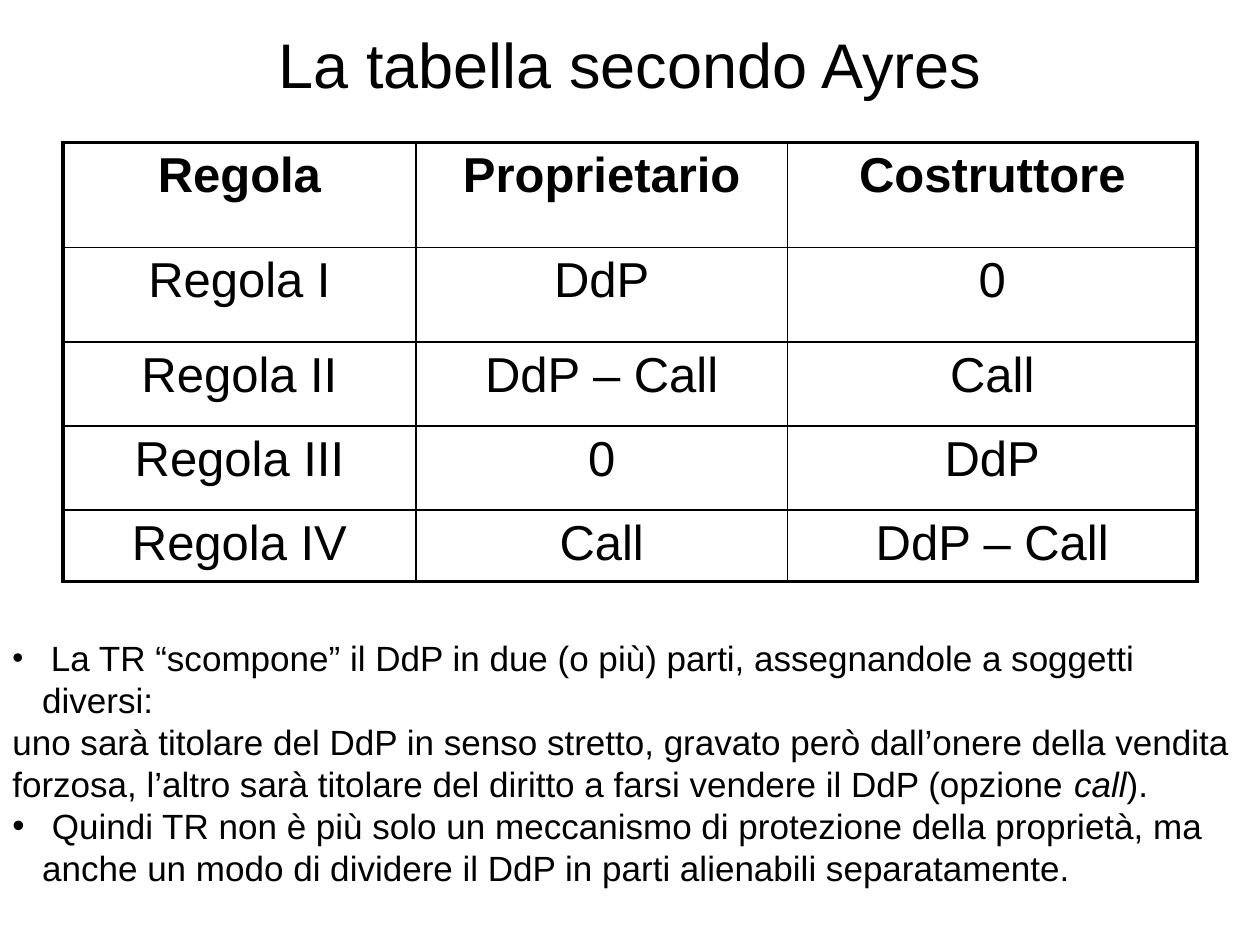
"""Build the slide on Ayres' table of property rules."""
from dataclasses import dataclass

import pptx
import pptx.dml.color
import pptx.enum.text
import pptx.oxml
import pptx.oxml.ns
import pptx.util

Pt = pptx.util.Pt
Align = pptx.enum.text.PP_ALIGN
Anchor = pptx.enum.text.MSO_ANCHOR

FONT = "Arial"
INK = "000000"
OUTER, INNER = 2.25, 1
HANGING = 17


@dataclass(frozen=True)
class Run:
    text: str
    size: float = 20
    italic: bool = False


@dataclass(frozen=True)
class Remark:
    runs: tuple[Run, ...]
    bulleted: bool = False


COLUMN_WIDTHS = (201.6, 212.4, 234)
ROW_HEIGHTS = (60, 54, 48, 48, 41)
RULES = (
    ("Regola", "Proprietario", "Costruttore"),
    ("Regola I", "DdP", "0"),
    ("Regola II", "DdP – Call", "Call"),
    ("Regola III", "0", "DdP"),
    ("Regola IV", "Call", "DdP – Call"),
)
REMARKS = (
    Remark((
        Run(" ", 18),
        Run("La TR “scompone” il DdP in due (o più) parti, assegnandole a soggetti diversi:"),
    ), bulleted=True),
    Remark((
        Run("uno sarà titolare del DdP in senso stretto, gravato però dall’onere della vendita "
            "forzosa, l’altro sarà titolare del diritto a farsi vendere il DdP (opzione "),
        Run("call", italic=True),
        Run(")."),
    )),
    Remark((
        Run(" Quindi TR non è più solo un meccanismo di protezione della proprietà, ma anche "
            "un modo di dividere il DdP in parti alienabili separatamente."),
    ), bulleted=True),
)


def color(value: str) -> pptx.dml.color.RGBColor:
    return pptx.dml.color.RGBColor.from_string(value)


def xml(markup: str):
    return pptx.oxml.parse_xml(markup.replace(" ", f" {pptx.oxml.ns.nsdecls('a')} ", 1))


def set_font(font, size: float, bold: bool = False) -> None:
    font.name, font.size, font.bold = FONT, Pt(size), bold
    font.color.rgb = color(INK)


def add_frame(slide, left: float, top: float, width: float, height: float):
    frame = slide.shapes.add_textbox(Pt(left), Pt(top), Pt(width), Pt(height)).text_frame
    frame.word_wrap = True
    return frame


def add_title(slide, text: str) -> None:
    frame = add_frame(slide, 36, -8.64, 648, 90)
    frame.vertical_anchor = Anchor.MIDDLE
    heading = frame.paragraphs[0]
    heading.text, heading.alignment = text, Align.CENTER
    set_font(heading.font, 36)


def set_borders(cell, row: int, column: int) -> None:
    on_edge = {
        "lnL": column == 0,
        "lnR": column == len(COLUMN_WIDTHS) - 1,
        "lnT": row == 0,
        "lnB": row == len(ROW_HEIGHTS) - 1,
    }
    properties = cell._tc.get_or_add_tcPr()
    for position, (side, outer) in enumerate(on_edge.items()):
        width = int(Pt(OUTER if outer else INNER))
        properties.insert(position, xml(
            f'<a:{side} w="{width}"><a:solidFill><a:srgbClr val="{INK}"/></a:solidFill></a:{side}>'
        ))


def add_rules_table(slide) -> None:
    table = slide.shapes.add_table(
        len(ROW_HEIGHTS), len(COLUMN_WIDTHS), Pt(36), Pt(81.36),
        Pt(sum(COLUMN_WIDTHS)), Pt(sum(ROW_HEIGHTS)),
    ).table
    table.first_row = table.horz_banding = False
    for column, width in zip(table.columns, COLUMN_WIDTHS):
        column.width = Pt(width)
    for row, height in zip(table.rows, ROW_HEIGHTS):
        row.height = Pt(height)
    for r, entries in enumerate(RULES):
        for c, entry in enumerate(entries):
            cell = table.cell(r, c)
            cell.margin_left = cell.margin_right = Pt(8.64)
            cell.fill.background()
            set_borders(cell, r, c)
            label = cell.text_frame.paragraphs[0]
            label.text, label.alignment = entry, Align.CENTER
            set_font(label.font, 28, bold=r == 0)


def add_remarks(slide) -> None:
    frame = add_frame(slide, 0, 360, 720, 128)
    for index, remark in enumerate(REMARKS):
        paragraph = frame.add_paragraph() if index else frame.paragraphs[0]
        if remark.bulleted:
            properties = paragraph._p.get_or_add_pPr()
            properties.set("marL", str(int(Pt(HANGING))))
            properties.set("indent", str(-int(Pt(HANGING))))
            properties.append(xml(f'<a:buFont typeface="{FONT}"/>'))
            properties.append(xml('<a:buChar char="•"/>'))
        for part in remark.runs:
            run = paragraph.add_run()
            run.text = part.text
            set_font(run.font, part.size)
            run.font.italic = part.italic


def main() -> None:
    deck = pptx.Presentation()
    deck.slide_width, deck.slide_height = Pt(720), Pt(540)
    slide = deck.slides.add_slide(deck.slide_layouts[6])
    add_title(slide, "La tabella secondo Ayres")
    add_rules_table(slide)
    add_remarks(slide)
    deck.save("out.pptx")


if __name__ == "__main__":
    main()
